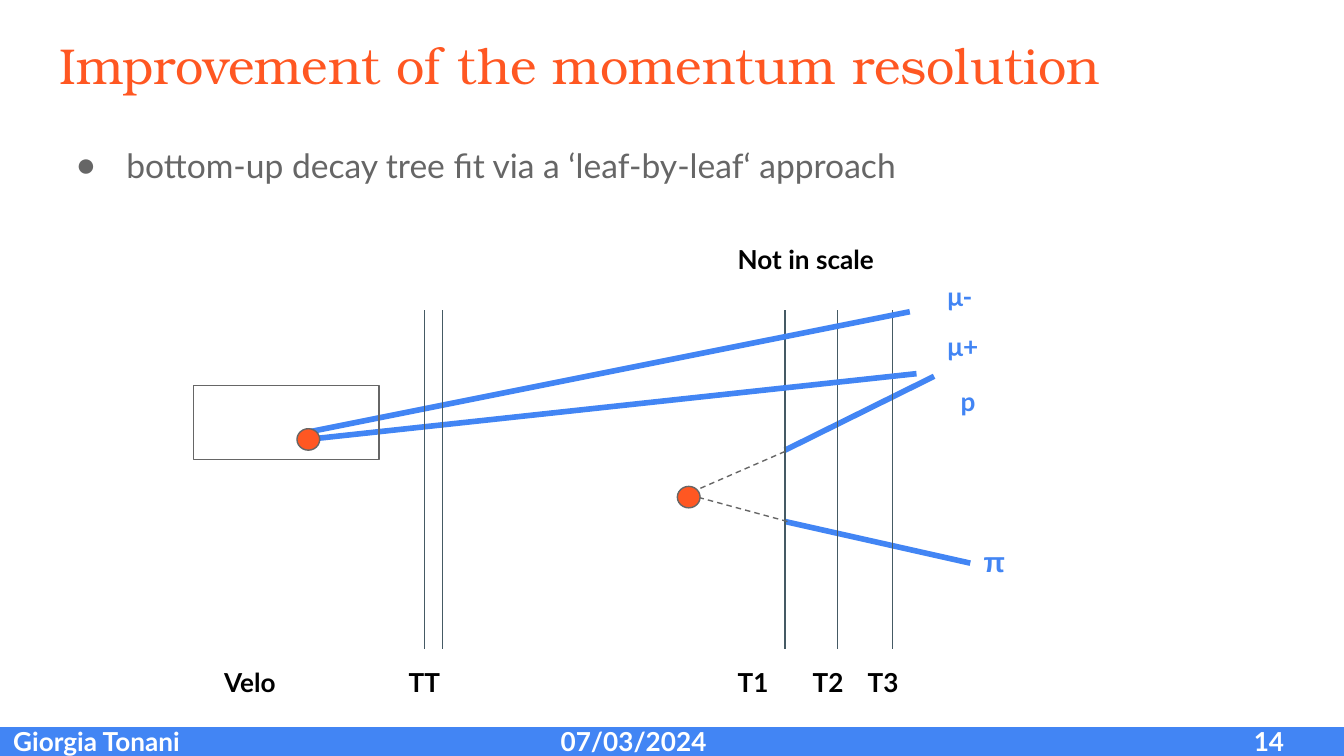
import pptx
import pptx.dml.color
import pptx.enum.dml
import pptx.enum.shapes
import pptx.enum.text
import pptx.oxml.ns
import pptx.util
from lxml import etree

Pt = pptx.util.Pt
Shapes = pptx.enum.shapes.MSO_SHAPE

ORANGE, BLUE, GREY, SLATE = "FF5722", "4285F4", "666666", "455A64"
BLACK, WHITE = "000000", "FFFFFF"

TITLE = "Improvement of the momentum resolution"
BULLET = "bottom-up decay tree fit via a ‘leaf-by-leaf‘ approach"

# Lines: start x, start y, end x, end y
DECAY_TRACKS = [(420.5, 241.2, 500.4, 201.6), (420.5, 279.4, 519.8, 301.7)]
MUON_TRACKS = [(163.4, 231.8, 487.4, 167), (164.9, 235.4, 491, 200.2)]
EXTRAPOLATIONS = [(420.5, 241.9, 365.8, 265.7), (421.9, 279.4, 365.8, 264.2)]
PLANE_TOP, PLANE_BOTTOM = 166.3, 347.8
T_PLANES = [420.5, 448.6, 478.1]
TT_PLANES = [227.5, 236.9]

# Left, top, width, height
VERTICES = [(362.9, 260.6, 12.2, 11.5), (159.1, 229.7, 12.2, 11.5)]
VELO = (103.7, 206.6, 99.4, 39.6)
FOOTER_BAND = (0, 389.5, 720, 15.5)

# Text, left, top, width, colour, font, size
LABELS = [
    ("p", 507.6, 199.4, 41, BLUE, "Lato", 14),
    ("π", 519.8, 284.4, 46.8, BLUE, "Arial", 15),
    ("μ-", 500.4, 143.3, 41, BLUE, "Lato", 14),
    ("μ+", 500.4, 169.9, 46.8, BLUE, "Lato", 14),
    ("Not in scale", 388.1, 123.1, 90.7, BLACK, "Lato", 14),
]
# Words on one line, each after the first at a tab stop
DETECTORS = ["Velo", "TT", "T1", "T2", "T3"]
DETECTOR_STOPS = [98.9, 275.1, 315.3, 344.8]
FOOTER = ["Giorgia Tonani", "07/03/2024", "14"]
FOOTER_STOPS = [293.3, 664.6]


def colour(value):
    return pptx.dml.color.RGBColor.from_string(value)


def add_span(para, text, font, size, hex_colour, bold=False):
    span = para.add_run()
    span.text = text
    span.font.name = font
    span.font.size = Pt(size)
    span.font.bold = bold
    span.font.color.rgb = colour(hex_colour)


def set_frame(shape):
    frame = shape.text_frame
    frame.word_wrap = True
    frame.auto_size = pptx.enum.text.MSO_AUTO_SIZE.NONE
    frame.vertical_anchor = pptx.enum.text.MSO_ANCHOR.TOP
    frame.margin_left = frame.margin_right = Pt(7.2)
    frame.margin_top = frame.margin_bottom = Pt(7.2)
    para = frame.paragraphs[0]
    para.alignment = pptx.enum.text.PP_ALIGN.LEFT
    para.space_before = Pt(0)
    return para


def fill_placeholder(shape, top, height):
    shape.left, shape.top = Pt(24.5), Pt(top)
    shape.width, shape.height = Pt(671), Pt(height)
    return set_frame(shape)


def add_bullet(para, symbol, hex_colour):
    properties = para._p.get_or_add_pPr()
    properties.set("marL", str(Pt(36)))
    properties.set("indent", str(-Pt(27)))
    tag = pptx.oxml.ns.qn
    paint = etree.SubElement(properties, tag("a:buClr"))
    etree.SubElement(paint, tag("a:srgbClr"), val=hex_colour)
    etree.SubElement(properties, tag("a:buChar"), char=symbol)


def add_tab_stops(para, stops):
    tag = pptx.oxml.ns.qn
    tabs = etree.SubElement(para._p.get_or_add_pPr(), tag("a:tabLst"))
    for stop in stops:
        etree.SubElement(tabs, tag("a:tab"), pos=str(Pt(stop)), algn="l")


def add_label(page, text, left, top, width, hex_colour, font="Lato", size=14, stops=()):
    box = page.shapes.add_textbox(Pt(left), Pt(top), Pt(width), Pt(31.7))
    para = set_frame(box)
    if stops:
        add_tab_stops(para, stops)
    add_span(para, text, font, size, hex_colour, bold=True)


def add_line(page, ends, hex_colour, width, dashed=False):
    line = page.shapes.add_connector(
        pptx.enum.shapes.MSO_CONNECTOR.STRAIGHT, *[Pt(value) for value in ends])
    line.line.color.rgb = colour(hex_colour)
    line.line.width = Pt(width)
    if dashed:
        line.line.dash_style = pptx.enum.dml.MSO_LINE.DASH
    etree.SubElement(line._element.spPr, pptx.oxml.ns.qn("a:effectLst"))


def add_planes(page, positions):
    for x in positions:
        add_line(page, (x, PLANE_TOP, x, PLANE_BOTTOM), SLATE, 0.75)


def add_figure(page, kind, area, fill=None, outline=None):
    shape = page.shapes.add_shape(kind, *[Pt(value) for value in area])
    shape.shadow.inherit = False
    if fill:
        shape.fill.solid()
        shape.fill.fore_color.rgb = colour(fill)
    else:
        shape.fill.background()
    if outline:
        shape.line.color.rgb = colour(outline)
        shape.line.width = Pt(0.75)
    else:
        shape.line.fill.background()


def main():
    deck = pptx.Presentation()
    deck.slide_width, deck.slide_height = Pt(720), Pt(405)
    page = deck.slides.add_slide(deck.slide_layouts[1])

    para = fill_placeholder(page.shapes.title, 10.8, 45.4)
    add_span(para, TITLE, "TeX Gyre Bonum", 27, ORANGE)
    para = fill_placeholder(page.placeholders[1], 67, 56.9)
    para.line_spacing = 1.15
    add_bullet(para, "●", GREY)
    add_span(para, BULLET, "Lato", 18, GREY)

    for ends in DECAY_TRACKS:
        add_line(page, ends, BLUE, 3)
    add_planes(page, T_PLANES)
    for ends in EXTRAPOLATIONS:
        add_line(page, ends, GREY, 0.75, dashed=True)
    for ends in MUON_TRACKS:
        add_line(page, ends, BLUE, 3)
    for area in VERTICES:
        add_figure(page, Shapes.OVAL, area, ORANGE, GREY)
    for label in LABELS:
        add_label(page, *label)
    add_label(page, "\t".join(DETECTORS), 113, 349.9, 436.3, BLACK, stops=DETECTOR_STOPS)
    add_planes(page, TT_PLANES)
    add_figure(page, Shapes.RECTANGLE, VELO, outline=GREY)
    add_figure(page, Shapes.RECTANGLE, FOOTER_BAND, fill=BLUE)
    add_label(page, "\t".join(FOOTER), 0, 381.6, 720, WHITE, stops=FOOTER_STOPS)

    deck.save("out.pptx")


if __name__ == "__main__":
    main()
